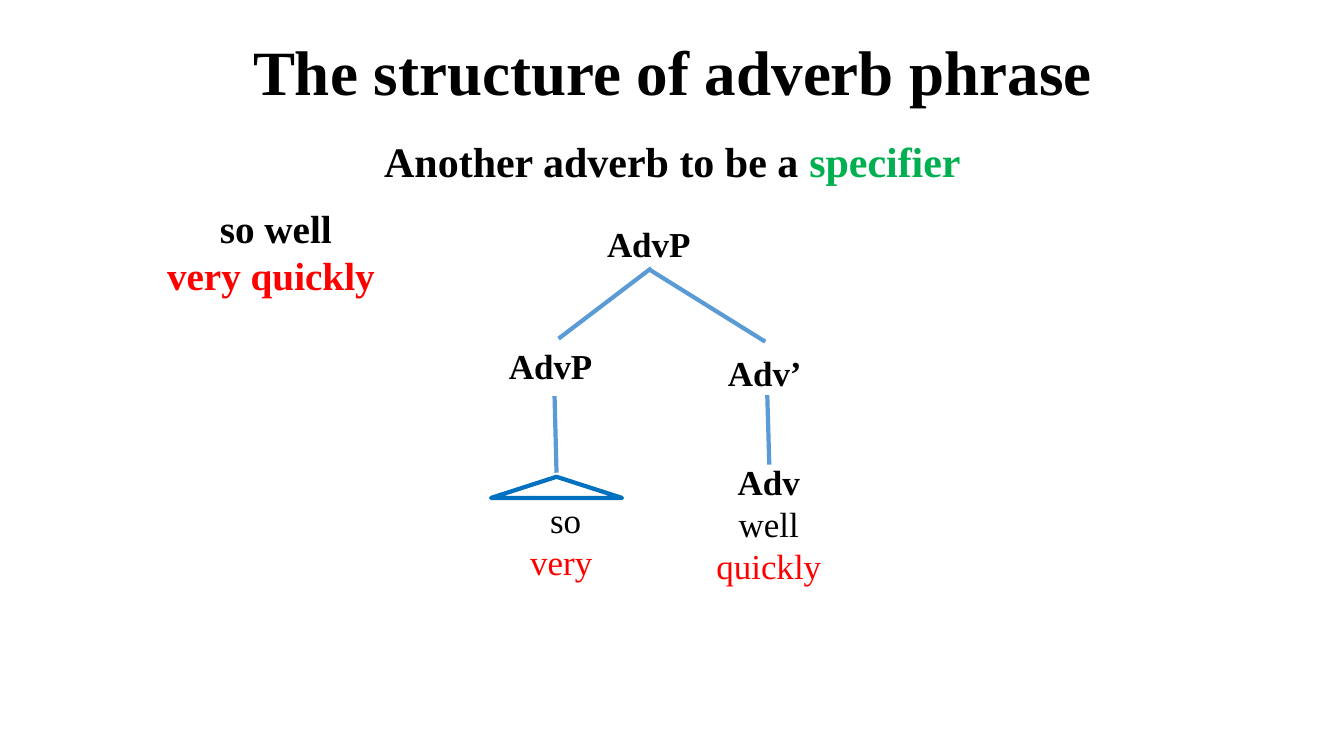
from dataclasses import dataclass

from lxml.etree import SubElement
from pptx import Presentation
from pptx.dml.color import RGBColor
from pptx.enum.shapes import MSO_CONNECTOR, MSO_SHAPE
from pptx.enum.text import MSO_ANCHOR, MSO_AUTO_SIZE, PP_ALIGN
from pptx.oxml.ns import qn
from pptx.util import Inches, Pt


@dataclass(frozen=True)
class Theme:
    font: str = "Times New Roman"
    ink: str = "000000"
    accent: str = "FF0000"
    specifier: str = "00B050"
    paper: str = "FFFFFF"
    branch: str = "5B9BD5"
    triangle: str = "0070C0"
    title_size: int = 45
    heading_size: int = 30
    example_size: int = 28
    node_size: int = 25
    line_width: int = 3


@dataclass(frozen=True)
class Line:
    text: str
    color: str
    bold: bool = True


class TreeSlide:
    """Places elements on a grid whose columns and rows are a tenth of an inch."""

    CELL = Inches(0.1)

    def __init__(self, presentation, theme):
        self.theme = theme
        self.slide = presentation.slides.add_slide(presentation.slide_layouts[1])
        self.shapes = self.slide.shapes
        self.slide.background.fill.solid()
        self.slide.background.fill.fore_color.rgb = RGBColor.from_string(theme.paper)

    def grid(self, *cells):
        return [round(cell * self.CELL) for cell in cells]

    def move(self, shape, *box):
        shape.left, shape.top, shape.width, shape.height = self.grid(*box)

    def set_lines(self, shape, lines, size, anchor=MSO_ANCHOR.MIDDLE):
        """Fill the shape with one centred paragraph per line and return the first."""
        frame = shape.text_frame
        frame.word_wrap = True
        frame.auto_size = MSO_AUTO_SIZE.NONE
        frame.vertical_anchor = anchor
        frame.text = "\n".join(line.text for line in lines)
        for paragraph, line in zip(frame.paragraphs, lines):
            paragraph.alignment = PP_ALIGN.CENTER
            font = paragraph.font
            font.name, font.size, font.bold = self.theme.font, Pt(size), line.bold
            font.color.rgb = RGBColor.from_string(line.color)
        return frame.paragraphs[0]

    def title(self, text, *box):
        shape = self.shapes.title
        self.move(shape, *box)
        line = Line(text, self.theme.ink)
        self.set_lines(shape, [line], self.theme.title_size).line_spacing = 0.9

    def heading(self, text, highlight, *box):
        shape = self.slide.placeholders[1]
        self.move(shape, *box)
        paragraph = self.set_lines(
            shape, [Line(text, self.theme.ink)], self.theme.heading_size, MSO_ANCHOR.TOP
        )
        paragraph.line_spacing = 0.9
        paragraph.space_before = Pt(10)
        run = paragraph.add_run()
        run.text = highlight
        run.font.color.rgb = RGBColor.from_string(self.theme.specifier)
        properties = paragraph._p.get_or_add_pPr()
        properties.set("marL", "0")
        properties.set("indent", "0")
        bullet = SubElement(properties, qn("a:buNone"))
        properties.find(qn("a:defRPr")).addprevious(bullet)

    def node(self, lines, *box):
        shape = self.shapes.add_textbox(*self.grid(*box))
        frame = shape.text_frame
        frame.margin_left = frame.margin_right = 0
        self.set_lines(shape, lines, self.theme.node_size)

    def examples(self, lines, *box):
        shape = self.shapes.add_shape(MSO_SHAPE.RECTANGLE, *self.grid(*box))
        shape.shadow.inherit = False
        shape.fill.solid()
        shape.fill.fore_color.rgb = RGBColor.from_string(self.theme.paper)
        shape.line.fill.background()
        self.set_lines(shape, lines, self.theme.example_size)

    def stroke(self, shape, color):
        shape.line.color.rgb = RGBColor.from_string(color)
        shape.line.width = Pt(self.theme.line_width)

    def branch(self, *ends):
        connector = self.shapes.add_connector(MSO_CONNECTOR.STRAIGHT, *self.grid(*ends))
        self.stroke(connector, self.theme.branch)
        SubElement(connector._element.spPr, qn("a:effectLst"))

    def triangle(self, *box):
        shape = self.shapes.add_shape(MSO_SHAPE.ISOSCELES_TRIANGLE, *self.grid(*box))
        shape.shadow.inherit = False
        shape.fill.background()
        self.stroke(shape, self.theme.triangle)


def main():
    presentation = Presentation()
    presentation.slide_width, presentation.slide_height = Inches(13.33), Inches(7.5)
    theme = Theme()
    ink, accent = theme.ink, theme.accent
    tree = TreeSlide(presentation, theme)

    tree.title("The structure of adverb phrase", 9.2, 4, 115, 7)
    tree.heading("Another adverb to be a ", "specifier", 9.2, 13.5, 115, 51.1)

    for lines, box in (
        ([Line("AdvP", ink)], (59.2, 21.6, 10.3, 5.1)),
        ([Line("Adv’", ink)], (71, 34.4, 9.7, 5.1)),
        (
            [Line("Adv", ink), Line("well", ink, False), Line("quickly", accent, False)],
            (69, 46.3, 14.5, 11.3),
        ),
        ([Line("AdvP ", ink)], (49.6, 33.7, 10.7, 5.1)),
        ([Line("so", ink, False), Line("very ", accent, False)], (49.6, 49.6, 13, 8.1)),
    ):
        tree.node(lines, *box)

    for ends in (
        (64.5, 26.8, 75.9, 33.9),
        (76.1, 39.2, 76.3, 46.1),
        (64.6, 26.6, 55.4, 33.6),
        (55, 39.3, 55.2, 46.9),
    ):
        tree.branch(*ends)
    tree.triangle(48.7, 47.3, 13, 2.1)

    tree.examples(
        [Line("so well", ink), Line("very quickly ", accent)], 15.4, 20.5, 23.9, 8.8
    )
    presentation.save("out.pptx")


if __name__ == "__main__":
    main()
